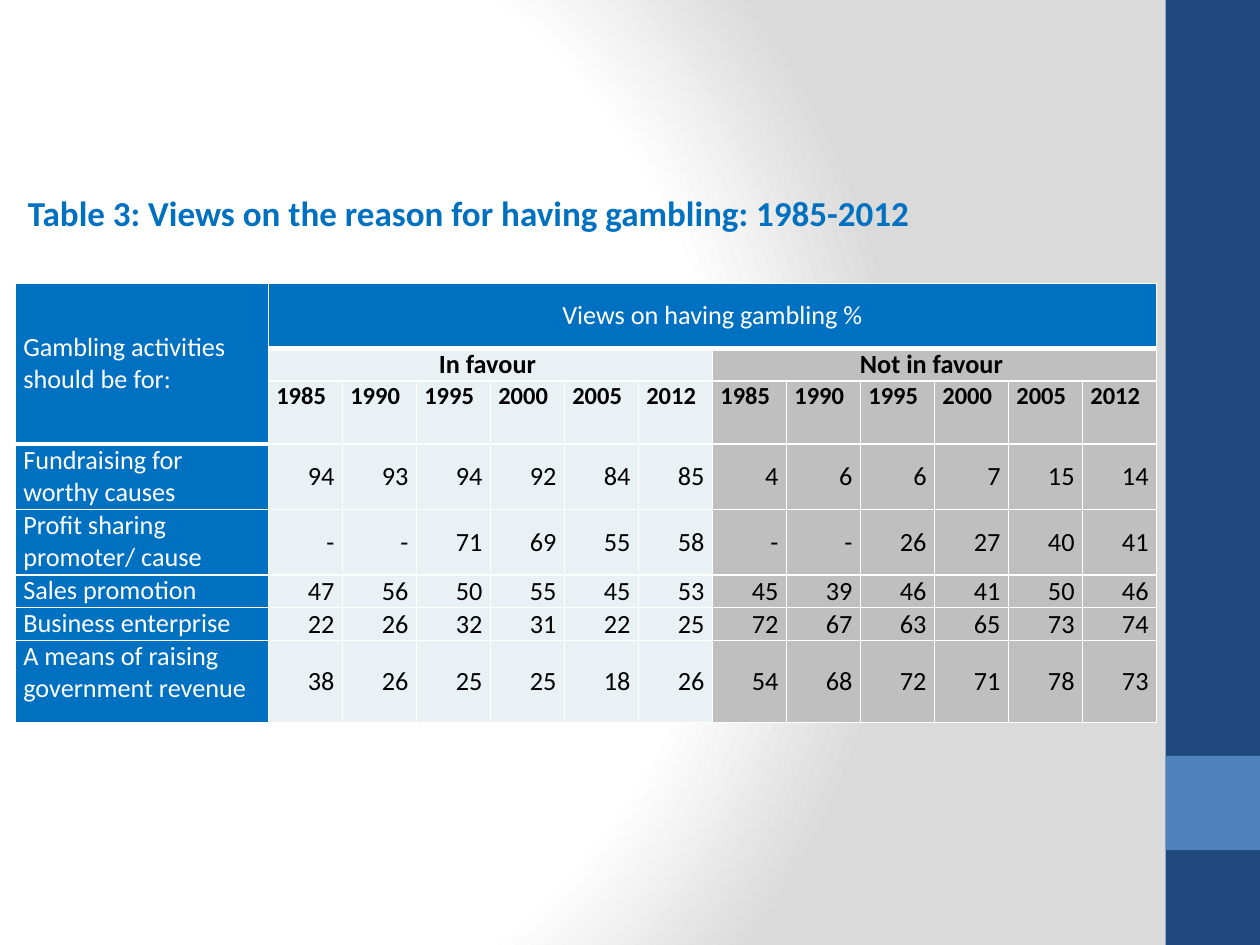
import pptx
import pptx.dml.color
import pptx.enum.shapes
import pptx.enum.text
import pptx.oxml
import pptx.oxml.ns
import pptx.util
from pptx.util import Cm

ALIGN = pptx.enum.text.PP_ALIGN
ANCHOR = pptx.enum.text.MSO_ANCHOR

FONT = "Calibri"
BLUE, PALE, GREY = "0070C0", "E9F1F5", "BFBFBF"
WHITE, BLACK = "FFFFFF", "000000"

YEARS = ["1985", "1990", "1995", "2000", "2005", "2012"]
GROUPS = [("In favour ", PALE), ("Not in favour ", GREY)]
# Label, values for both groups, space before and after in points
REASONS = [
    ("Fundraising for worthy causes", "94 93 94 92 84 85 4 6 6 7 15 14", 3, 3),
    ("Profit sharing promoter/ cause", "- - 71 69 55 58 - - 26 27 40 41", 0, 3),
    ("Sales promotion", "47 56 50 55 45 53 45 39 46 41 50 46", 0, 3),
    ("Business enterprise", "22 26 32 31 22 25 72 67 63 65 73 74", 0, 3),
    ("A means of raising government revenue",
     "38 26 25 25 18 26 54 68 72 71 78 73", 0, 0),
]
ROW_HEIGHTS = [1.3, 0.66, 1.09, 1.32, 1.32, 0.66, 0.66, 1.65]
LABEL_WIDTH = 5.1


def rgb(value):
    return pptx.dml.color.RGBColor.from_string(value)


def add_run(paragraph, text, size, color, bold=False):
    run = paragraph.add_run()
    run.text = text
    run.font.name = FONT
    run.font.size = pptx.util.Pt(size)
    run.font.bold = bold
    run.font.color.rgb = rgb(color)


def paint_background(slide):
    """White glow from the left that turns grey on the right."""
    fill = slide.background.fill
    fill.gradient()
    gradient = slide.background._cSld.find(".//" + pptx.oxml.ns.qn("a:gradFill"))
    stops = "".join(
        f'<a:gs pos="{position}000"><a:srgbClr val="{color}"/></a:gs>'
        for position, color in [(0, WHITE), (75, WHITE), (100, "DADADA")])
    radial = pptx.oxml.parse_xml(
        f'<a:gradFill {pptx.oxml.ns.nsdecls("a")} rotWithShape="1">'
        f'<a:gsLst>{stops}</a:gsLst><a:path path="circle">'
        '<a:fillToRect l="20000" t="50000" r="100000" b="50000"/>'
        '</a:path></a:gradFill>')
    gradient.getparent().replace(gradient, radial)


def add_side_band(slide, left, top, width, height):
    """Dark band with a lighter square near its foot."""
    for offset, part_height, color in [(0, height, "1F497D"),
                                       (0.8 * height, width, "4F81BD")]:
        band = slide.shapes.add_shape(
            pptx.enum.shapes.MSO_SHAPE.RECTANGLE,
            Cm(left), Cm(top + offset), Cm(width), Cm(part_height))
        band.shadow.inherit = False
        band.fill.solid()
        band.fill.fore_color.rgb = rgb(color)
        band.line.fill.background()


def add_heading(slide, left, top, width, height):
    heading = slide.shapes.title
    heading.left, heading.top = Cm(left), Cm(top)
    heading.width, heading.height = Cm(width), Cm(height)
    frame = heading.text_frame
    frame.word_wrap = True
    frame.auto_size = pptx.enum.text.MSO_AUTO_SIZE.SHAPE_TO_FIT_TEXT
    frame.vertical_anchor = ANCHOR.TOP
    paragraph = frame.paragraphs[0]
    paragraph.alignment = ALIGN.LEFT
    add_run(paragraph,
            "Table 3: Views on the reason for having gambling: 1985-2012",
            20, BLUE, bold=True)


def style_cell(cell, fill, bottom=1):
    cell.margin_left = cell.margin_right = Cm(0.16)
    cell.margin_top = cell.margin_bottom = 0
    cell.fill.solid()
    cell.fill.fore_color.rgb = rgb(fill)
    properties = cell._tc.get_or_add_tcPr()
    for index, (side, weight) in enumerate(
            [("L", 1), ("R", 1), ("T", 1), ("B", bottom)]):
        properties.insert(index, pptx.oxml.parse_xml(
            f'<a:ln{side} {pptx.oxml.ns.nsdecls("a")} w="{weight * 12700}">'
            f'<a:solidFill><a:srgbClr val="{WHITE}"/></a:solidFill>'
            f'</a:ln{side}>'))


def write_cell(cell, text, color=BLACK, size=15, bold=False, align=ALIGN.LEFT,
               anchor=ANCHOR.TOP, before=0, after=1):
    cell.vertical_anchor = anchor
    paragraph = cell.text_frame.paragraphs[0]
    paragraph.alignment = align
    paragraph.space_before = pptx.util.Pt(before)
    paragraph.space_after = pptx.util.Pt(after)
    add_run(paragraph, text, size, color, bold)


def add_views_table(slide, left, top, width):
    count = len(YEARS)
    columns = 1 + count * len(GROUPS)
    table = slide.shapes.add_table(
        len(ROW_HEIGHTS), columns, Cm(left), Cm(top),
        Cm(width), Cm(sum(ROW_HEIGHTS))).table
    table.first_row = table.horz_banding = False
    for row, height in zip(table.rows, ROW_HEIGHTS):
        row.height = Cm(height)
    for index, column in enumerate(table.columns):
        column.width = Cm(LABEL_WIDTH if index == 0
                          else (width - LABEL_WIDTH) / (columns - 1))

    # Fills and borders
    for r in range(len(ROW_HEIGHTS)):
        for c in range(columns):
            fill = BLUE if r == 0 or c == 0 else GROUPS[(c - 1) // count][1]
            style_cell(table.cell(r, c), fill, bottom=3 if r == 0 else 1)

    # Header rows
    table.cell(0, 0).merge(table.cell(2, 0))
    table.cell(0, 1).merge(table.cell(0, columns - 1))
    write_cell(table.cell(0, 0), "Gambling activities should be for:", WHITE,
               anchor=ANCHOR.MIDDLE)
    write_cell(table.cell(0, 1), "Views on having gambling %", WHITE,
               align=ALIGN.CENTER, anchor=ANCHOR.MIDDLE)
    for g, (group, _) in enumerate(GROUPS):
        first = 1 + g * count
        table.cell(1, first).merge(table.cell(1, first + count - 1))
        write_cell(table.cell(1, first), group, bold=True, align=ALIGN.CENTER)
        for c, year in enumerate(YEARS, first):
            write_cell(table.cell(2, c), year, size=14, bold=True,
                       align=ALIGN.JUSTIFY)

    # One row for each reason
    for r, (reason, values, before, after) in enumerate(REASONS, 3):
        write_cell(table.cell(r, 0), reason, WHITE, before=before, after=after)
        for c, value in enumerate(values.split(), 1):
            write_cell(table.cell(r, c), value, align=ALIGN.RIGHT,
                       anchor=ANCHOR.MIDDLE, before=before, after=after)


def main():
    presentation = pptx.Presentation()
    presentation.slide_width, presentation.slide_height = Cm(25.4), Cm(19.05)
    slide = presentation.slides.add_slide(presentation.slide_layouts[5])
    paint_background(slide)
    add_side_band(slide, 23.5, 0, 1.9, 19.05)
    add_views_table(slide, 0.31, 5.72, 23.01)
    add_heading(slide, 0.31, 3.73, 22.6, 1.12)
    presentation.save("out.pptx")


if __name__ == "__main__":
    main()
